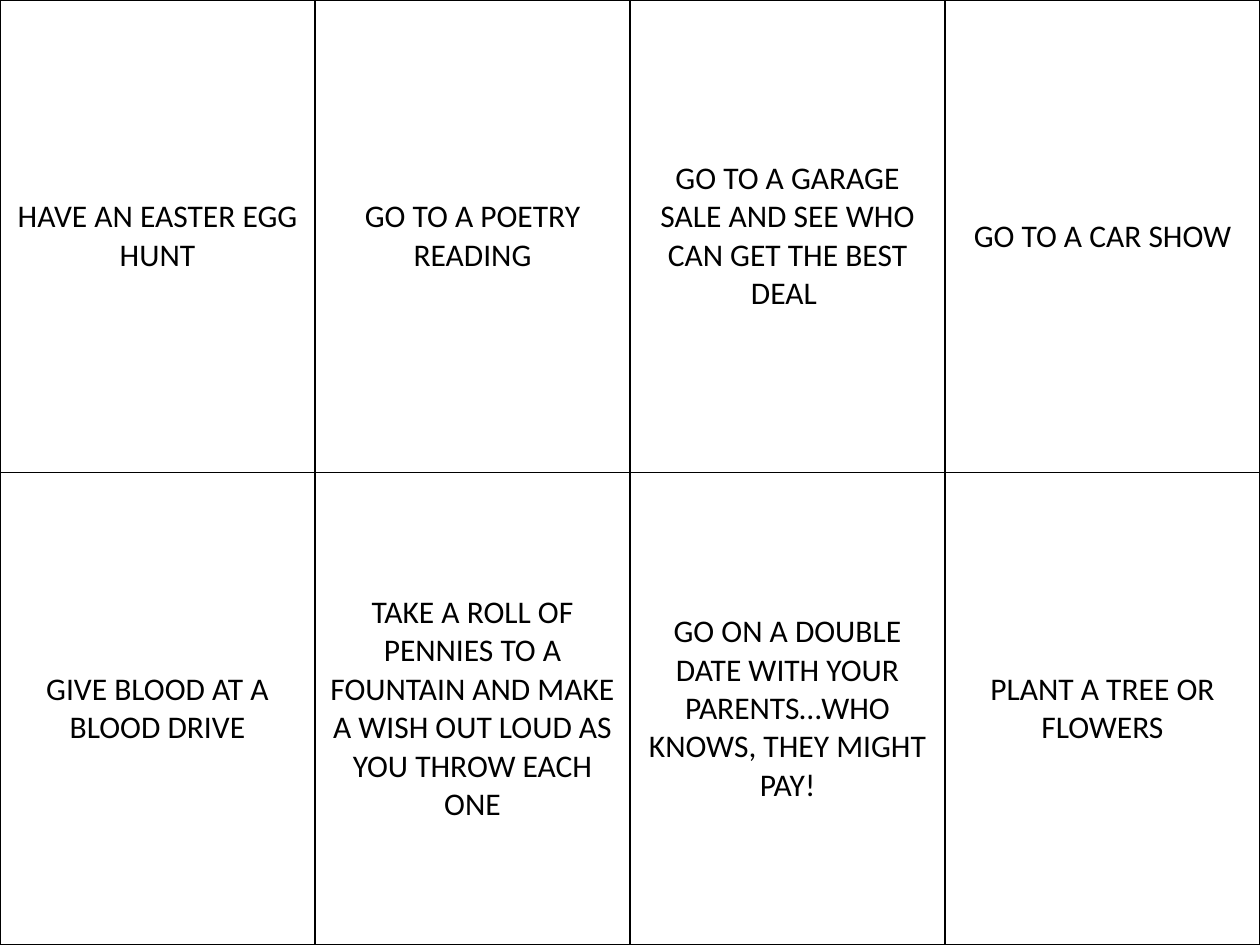
from lxml import etree
from pptx import Presentation
from pptx import util as u
from pptx.dml.color import RGBColor
from pptx.enum import text
from pptx.oxml import ns

WIDE, HIGH = 10, 7.5
IDEAS = [
    ["HAVE AN EASTER EGG HUNT",
     "GO TO A POETRY READING",
     "GO TO A GARAGE SALE AND SEE WHO CAN GET THE BEST DEAL ",
     "GO TO A CAR SHOW"],
    ["GIVE BLOOD AT A BLOOD DRIVE",
     "TAKE A ROLL OF PENNIES TO A FOUNTAIN AND MAKE A WISH OUT LOUD AS YOU THROW EACH ONE",
     "GO ON A DOUBLE DATE WITH YOUR PARENTS…WHO KNOWS, THEY MIGHT PAY!",
     "PLANT A TREE OR FLOWERS"],
]


def color(code):
    return RGBColor.from_string(code)


class Deck:
    ink, paper, rule = "000000", "FFFFFF", 1
    font = {"name": "Calibri", "size": u.Pt(18), "bold": False}

    def __init__(self, slide):
        self.slide = slide

    def border(self, cell):
        """Rule all four sides; lines must come before the fill in tcPr."""
        props = cell._tc.get_or_add_tcPr()
        for spot, side in enumerate(("lnL", "lnR", "lnT", "lnB")):
            line = etree.Element(ns.qn("a:" + side), w=str(u.Pt(self.rule)))
            fill = etree.SubElement(line, ns.qn("a:solidFill"))
            etree.SubElement(fill, ns.qn("a:srgbClr"), val=self.ink)
            props.insert(spot, line)

    def cell(self, cell, words):
        cell.text = words
        cell.vertical_anchor = text.MSO_ANCHOR.MIDDLE
        cell.fill.solid()
        cell.fill.fore_color.rgb = color(self.paper)
        para = cell.text_frame.paragraphs[0]
        para.alignment = text.PP_ALIGN.CENTER
        font = para.runs[0].font
        for key, value in self.font.items():
            setattr(font, key, value)
        font.color.rgb = color(self.ink)
        self.border(cell)

    def table(self, rows, left, top, width, height):
        box = [u.Inches(n) for n in (left, top, width, height)]
        grid = self.slide.shapes.add_table(len(rows), len(rows[0]), *box).table
        grid.first_row = grid.horz_banding = False
        for r, row in enumerate(rows):
            for c, words in enumerate(row):
                self.cell(grid.cell(r, c), words)


def main():
    show = Presentation()
    show.slide_width, show.slide_height = u.Inches(WIDE), u.Inches(HIGH)
    deck = Deck(show.slides.add_slide(show.slide_layouts[6]))
    deck.table(IDEAS, 0, 0, WIDE, HIGH)
    show.save("out.pptx")


if __name__ == "__main__":
    main()
